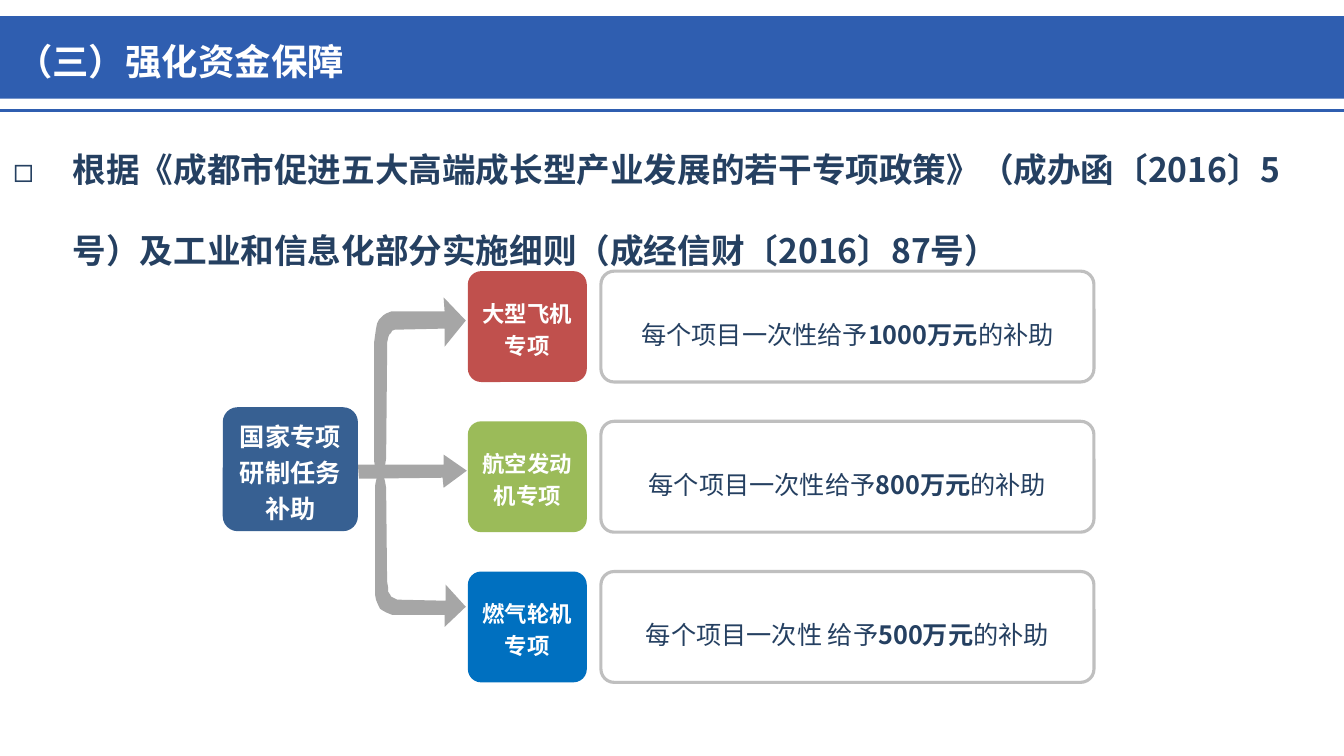
from lxml.etree import SubElement
from pptx import Presentation
from pptx.dml.color import RGBColor
from pptx.enum.shapes import MSO_CONNECTOR as Connector, MSO_SHAPE as Preset
from pptx.enum.text import MSO_ANCHOR as Anchor, MSO_AUTO_SIZE as AutoSize, PP_ALIGN as Align
from pptx.oxml.ns import qn
from pptx.util import Pt

PX = 9144  # 100 px to the inch
PAGE_WIDTH, PAGE_HEIGHT = 1333, 750
FONT = "Noto Sans CJK SC"
BAR_BLUE = RGBColor(0x2F, 0x5E, 0xB0)
NAVY = RGBColor(0x25, 0x40, 0x61)
WHITE = RGBColor(0xFF, 0xFF, 0xFF)
ARROW_GRAY = RGBColor(0xA6, 0xA6, 0xA6)
BORDER_GRAY = RGBColor(0xBF, 0xBF, 0xBF)
ROOT_BLUE = RGBColor(0x37, 0x60, 0x92)
RED = RGBColor(0xC0, 0x50, 0x4D)
GREEN = RGBColor(0x9B, 0xBB, 0x59)
BLUE = RGBColor(0x00, 0x70, 0xC0)

GRANTS = [
    ("大型飞机专项", RED, "每个项目一次性给予", "1000万元"),
    ("航空发动机专项", GREEN, "每个项目一次性给予", "800万元"),
    ("燃气轮机专项", BLUE, "每个项目一次性 给予", "500万元"),
]
# Outlines relative to the diagram: a pair is a corner, six numbers are a Bézier curve.
ARROWS = [
    [(162, 215), (163, 308), (164, 325, 169, 325, 176, 326), (221, 327), (221, 311),
     (241, 333), (220, 353), (220, 341), (220, 341, 190, 341, 174, 341),
     (157, 341, 151, 333, 151, 314), (151, 213), (153, 197, 160, 198, 162, 215)],
    [(135, 206), (218, 205), (219, 215), (242, 198), (219, 182), (219, 192), (134, 192)],
    [(162, 186), (163, 78), (163, 58, 168, 58, 176, 58), (220, 57), (220, 75),
     (241, 49), (219, 26), (220, 40), (220, 40, 190, 40, 173, 40),
     (156, 40, 151, 50, 150, 71), (150, 188), (152, 207, 159, 205, 162, 186)],
]


def place(box, left, top, width, height):
    box.left, box.top, box.width, box.height = (n * PX for n in (left, top, width, height))


def style(para, size, color, spacing, bold=None, align=Align.LEFT, hanging=0, bullet=None):
    """Format a paragraph; the font covers both Latin and East Asian text."""
    para.alignment = align
    para.line_spacing = spacing
    para.space_before = Pt(0)
    properties = para._p.get_or_add_pPr()
    properties.set("marL", str(hanging * PX))
    properties.set("indent", str(-hanging * PX))
    if bullet:
        SubElement(properties, qn("a:buFont")).set("typeface", FONT)
        SubElement(properties, qn("a:buChar")).set("char", bullet)
    font = para.font
    font.name, font.size, font.bold = FONT, Pt(size), bold
    font.color.rgb = color
    SubElement(properties.find(qn("a:defRPr")), qn("a:ea")).set("typeface", FONT)


def add_header(page, top, height):
    bar = page.shapes.add_shape(Preset.RECTANGLE, 0, top * PX, PAGE_WIDTH * PX, height * PX)
    bar.shadow.inherit = False
    bar.fill.solid()
    bar.fill.fore_color.rgb = BAR_BLUE
    bar.line.fill.background()
    title = page.shapes.title
    title._element.addprevious(bar._element)
    rule_y = (top + height + 12) * PX
    rule = page.shapes.add_connector(Connector.STRAIGHT, 0, rule_y, PAGE_WIDTH * PX, rule_y)
    rule.line.color.rgb = BAR_BLUE
    rule.line.width = Pt(2.25)
    SubElement(rule._element.spPr, qn("a:effectLst"))

    place(title, 6, top + 4, 511, height - 10)
    frame = title.text_frame
    frame.text = "（三）强化资金保障"
    frame.auto_size = AutoSize.NONE
    frame.vertical_anchor = Anchor.MIDDLE
    style(frame.paragraphs[0], 26, WHITE, 1.2, bold=True)


def add_basis(page, left, top, width, height):
    body = page.placeholders[1]
    place(body, left, top, width, height)
    frame = body.text_frame
    frame.text = ("根据《成都市促进五大高端成长型产业发展的若干专项政策》（成办函〔2016〕5号）"
                  "及工业和信息化部分实施细则（成经信财〔2016〕87号）")
    frame.auto_size = AutoSize.NONE
    frame.vertical_anchor = Anchor.TOP
    style(frame.paragraphs[0], 24, NAVY, 2.0, bold=True, hanging=59, bullet="◻")


def add_card(page, left, top, width, height, fill=None):
    """Add a rounded card, outlined if it has no fill, and return its text frame."""
    card = page.shapes.add_shape(Preset.ROUNDED_RECTANGLE, 0, 0, 0, 0)
    place(card, left, top, width, height)
    card.adjustments[0] = 0.12
    card.shadow.inherit = False
    if fill:
        card.fill.solid()
        card.fill.fore_color.rgb = fill
        card.line.fill.background()
    else:
        card.fill.background()
        card.line.color.rgb = BORDER_GRAY
        card.line.width = Pt(2.25)
    frame = card.text_frame
    frame.word_wrap = True
    frame.vertical_anchor = Anchor.MIDDLE
    frame.margin_left = frame.margin_right = 7 * PX
    frame.margin_top = frame.margin_bottom = 3 * PX
    return frame


def add_label(page, left, top, width, height, text, fill, size):
    frame = add_card(page, left, top, width, height, fill)
    frame.text = text
    style(frame.paragraphs[0], size, WHITE, 1.2, bold=True, align=Align.CENTER)


def add_grant(page, left, top, name, color, lead, amount):
    height = 110
    para = add_card(page, left + 132, top, 489, height).paragraphs[0]
    style(para, 18, NAVY, 1.5, align=Align.CENTER, hanging=38)
    for text, bold in ((lead, False), (amount, True), ("的补助", False)):
        span = para.add_run()
        span.text = text
        span.font.bold = bold
    add_label(page, left, top, 118, height, name, color, 16)


def flatten(outline, steps=8):
    """Turn corners and curves into a plain list of points."""
    points = [outline[0]]
    for part in outline[1:]:
        if len(part) == 2:
            points.append(part)
            continue
        (x0, y0), (x1, y1, x2, y2, x3, y3) = points[-1], part
        for step in range(1, steps + 1):
            t = step / steps
            a, b, c, d = (1 - t) ** 3, 3 * t * (1 - t) ** 2, 3 * t * t * (1 - t), t ** 3
            points.append((a * x0 + b * x1 + c * x2 + d * x3,
                           a * y0 + b * y1 + c * y2 + d * y3))
    return points


def add_arrow(page, left, top, outline):
    points = [(left + x, top + y) for x, y in flatten(outline)]
    builder = page.shapes.build_freeform(*points[0], scale=PX)
    builder.add_line_segments(points[1:], close=True)
    arrow = builder.convert_to_shape()
    arrow.shadow.inherit = False
    arrow.fill.solid()
    arrow.fill.fore_color.rgb = ARROW_GRAY
    arrow.line.fill.background()


def add_diagram(page, left, top):
    for outline in ARROWS:
        add_arrow(page, left, top, outline)
    for row, grant in enumerate(GRANTS):
        add_grant(page, left + 243, top + row * 149, *grant)
    add_label(page, left, top + 135, 134, 123, "国家专项研制任务补助", ROOT_BLUE, 18)


def main():
    deck = Presentation()
    deck.slide_width, deck.slide_height = PAGE_WIDTH * PX, PAGE_HEIGHT * PX
    page = deck.slides.add_slide(deck.slide_layouts[1])
    add_header(page, 16, 82)
    add_basis(page, 3, 103, 1325, 159)
    add_diagram(page, 221, 269)
    deck.save("out.pptx")


if __name__ == "__main__":
    main()
